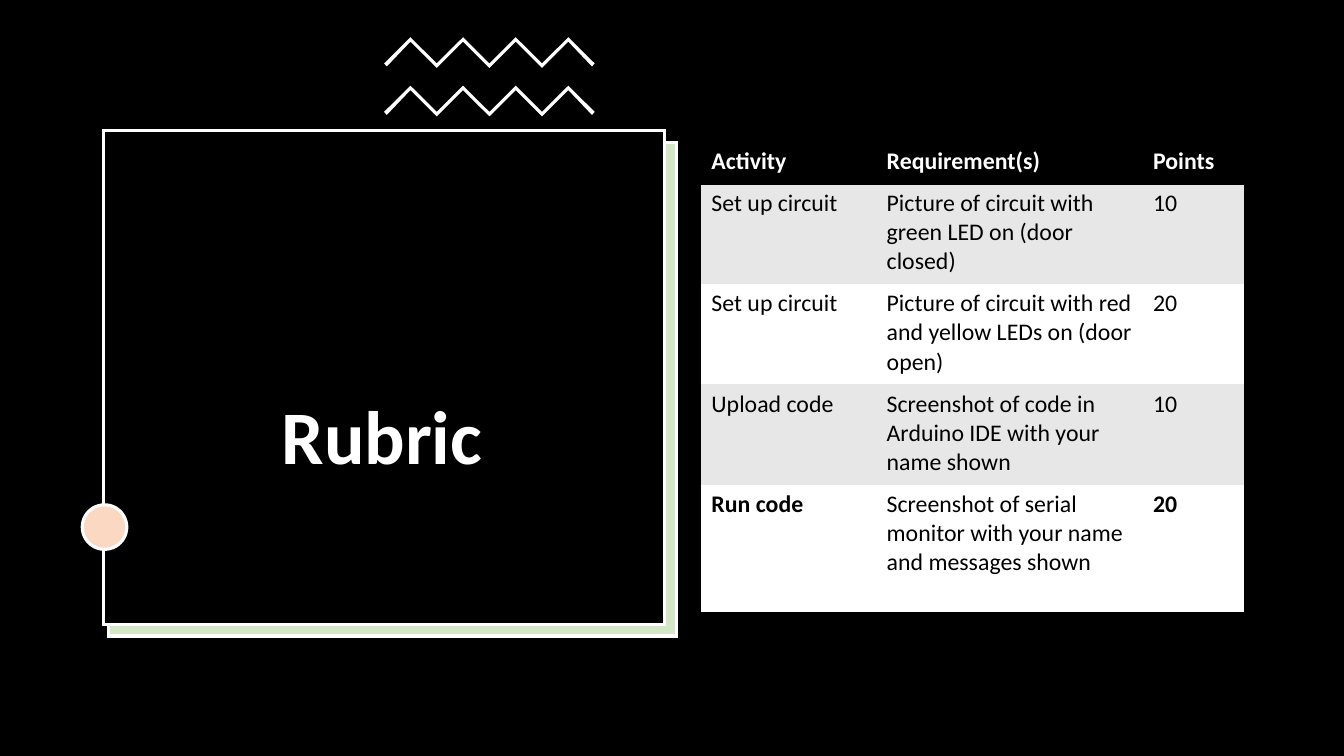
from lxml import etree
from pptx import Presentation
from pptx.dml.color import RGBColor
from pptx.enum.shapes import MSO_SHAPE
from pptx.enum.text import MSO_ANCHOR, PP_ALIGN
from pptx.oxml import parse_xml
from pptx.oxml.ns import nsdecls, qn
from pptx.util import Pt

RECTANGLE, OVAL = MSO_SHAPE.RECTANGLE, MSO_SHAPE.OVAL
BOTTOM, CENTER = MSO_ANCHOR.BOTTOM, PP_ALIGN.CENTER
FONT = "Calibri"
TITLE_ONLY = 5
PLAIN_TABLE_STYLE = "{2D5ABB26-0587-4C30-8999-92F81FD0307C}"
COLORS = {"black": "000000", "white": "FFFFFF", "band": "E7E7E7",
          "green": "D4E6C8", "peach": "FAD8C1"}


def color(name):
    return RGBColor.from_string(COLORS[name])


def add_filled(kind, left, top, width, height, fill, outlined=True):
    shape = page.shapes.add_shape(kind, Pt(left), Pt(top), Pt(width), Pt(height))
    shape.shadow.inherit = False
    shape.fill.solid()
    shape.fill.fore_color.rgb = color(fill)
    if outlined:
        shape.line.color.rgb = color("white")
        shape.line.width = Pt(2.25)
        # Sharp corners
        etree.SubElement(shape.element.spPr.find(qn("a:ln")), qn("a:miter"), lim="800000")
    else:
        shape.line.fill.background()


deck = Presentation()
deck.slide_width, deck.slide_height = Pt(960), Pt(540)
page = deck.slides.add_slide(deck.slide_layouts[TITLE_ONLY])

# Black backdrop
add_filled(RECTANGLE, 0, 0, 960, 540, "black", outlined=False)

# Zigzag bands: upper edge left to right, then lower edge back
LEFT, STEP = 274.4, 18.8
for top in (26.6, 61.2):
    upper = [(LEFT + i * STEP, top + (0 if i % 2 else 18.7)) for i in range(9)]
    lower = [(x, y + 3.2) for x, y in upper]
    lower[0] = (LEFT + 1.9, top + 20.9)
    lower[-1] = (LEFT + 8 * STEP - 1.9, top + 20.9)
    outline = [(Pt(x), Pt(y)) for x, y in upper + lower[::-1]]
    builder = page.shapes.build_freeform(*outline[0], scale=1.0)
    builder.add_line_segments(outline[1:], close=True)
    zigzag = builder.convert_to_shape()
    zigzag.shadow.inherit = False
    zigzag.fill.solid()
    zigzag.fill.fore_color.rgb = color("white")
    zigzag.line.fill.background()

# Title panel with its offset backing
add_filled(RECTANGLE, 77.8, 101.5, 405.4, 352.8, "green")
add_filled(RECTANGLE, 74, 93.3, 401, 352.8, "black")

# Title, brought in front of the panel
title = page.shapes.title
page.shapes.element.append(title.element)
title.left, title.top, title.width, title.height = Pt(116.6), Pt(128.9), Pt(312.5), Pt(218.2)
frame = title.text_frame
frame.text = "Rubric"
frame.word_wrap = True
frame.vertical_anchor = BOTTOM
para = frame.paragraphs[0]
para.alignment = CENTER
para.line_spacing = 0.9
para.font.name = FONT
para.font.size = Pt(54)
para.font.bold = True
para.font.color.rgb = color("white")

add_filled(OVAL, 58.8, 360.6, 31.8, 31.8, "peach")

# Rubric table
ROWS = [
    ("Activity", "Requirement(s)", "Points"),
    ("Set up circuit", "Picture of circuit with green LED on (door closed)", "10"),
    ("Set up circuit", "Picture of circuit with red and yellow LEDs on (door open)", "20"),
    ("Upload code", "Screenshot of code in Arduino IDE with your name shown", "10"),
    ("Run code", "Screenshot of serial monitor with your name and messages shown", "20"),
]
WIDTHS = (125.2, 190.3, 71.9)
HEIGHTS = (30.4, 71.6, 71.6, 71.6, 91.9)
LAST = len(ROWS) - 1
table = page.shapes.add_table(len(ROWS), len(WIDTHS), Pt(501), Pt(101),
                              Pt(sum(WIDTHS)), Pt(sum(HEIGHTS))).table
table.first_row = table.horz_banding = False
style = table._tbl.tblPr.find("{*}tableStyleId")
style.text = PLAIN_TABLE_STYLE
for column, width in zip(table.columns, WIDTHS):
    column.width = Pt(width)
for r, (row, height) in enumerate(zip(table.rows, HEIGHTS)):
    row.height = Pt(height)
    header = r == 0
    fill = "black" if header else "band" if r % 2 else "white"
    sides = ("lnT", "lnB") if header else ("lnB",) if r == LAST else ()
    for c, cell in enumerate(row.cells):
        cell.text = ROWS[r][c]
        cell.fill.solid()
        cell.fill.fore_color.rgb = color(fill)
        span = cell.text_frame.paragraphs[0].runs[0]
        span.font.name = FONT
        span.font.size = Pt(17)
        span.font.bold = header or (r == LAST and c != 1)
        span.font.color.rgb = color("white" if header else "black")
        # Rules above and below the header, and under the last row
        properties = cell._tc.get_or_add_tcPr()
        for position, side in enumerate(sides):
            border = parse_xml(f'<a:{side} {nsdecls("a")} w="{Pt(2)}"/>')
            solid = etree.SubElement(border, qn("a:solidFill"))
            etree.SubElement(solid, qn("a:srgbClr"), val=COLORS["black"])
            properties.insert(position, border)

deck.save("out.pptx")
